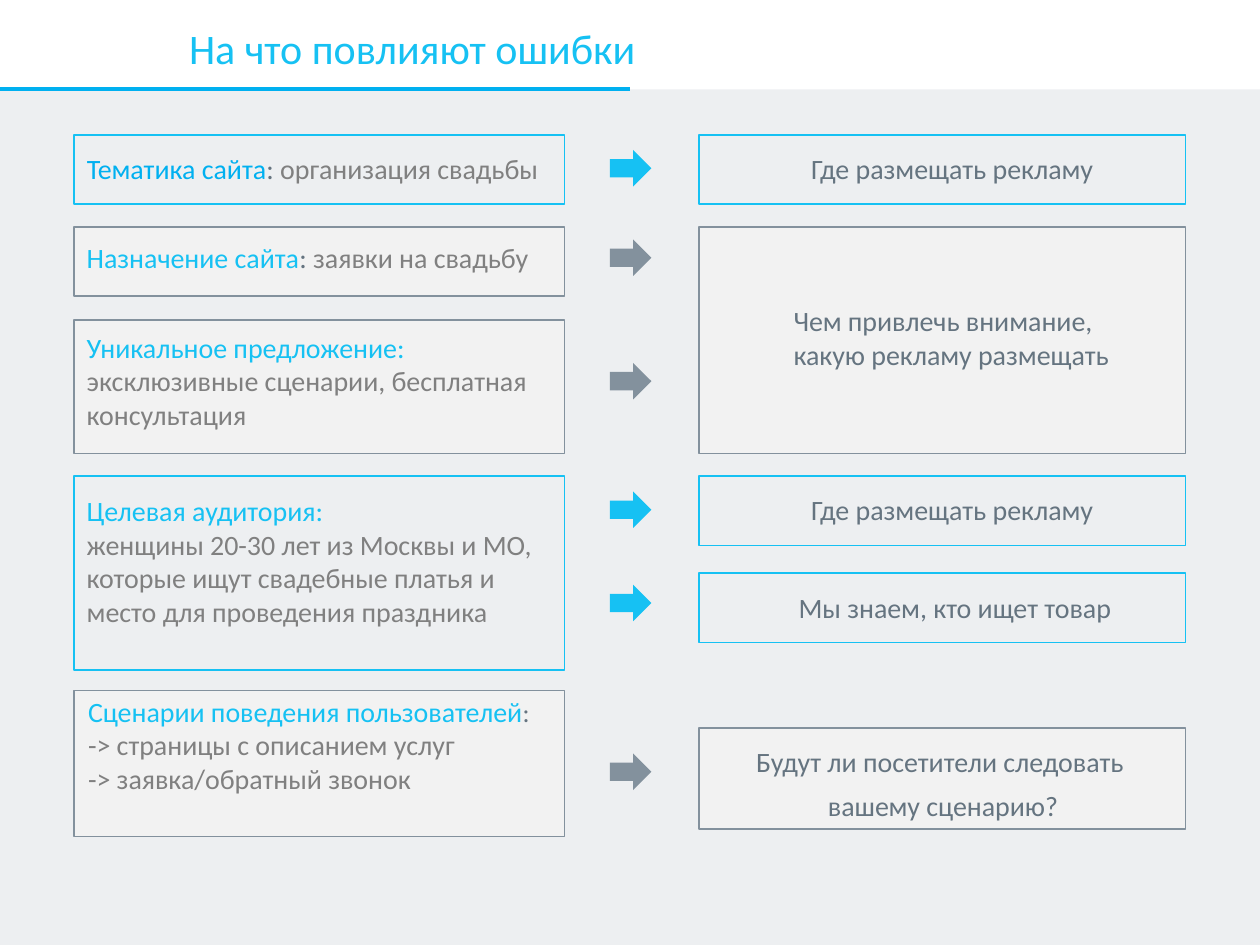
import pptx
import pptx.util
import pptx.dml.color
import pptx.enum.shapes
import pptx.enum.text
import pptx.oxml
import pptx.oxml.ns
from lxml import etree

Inches, Pt = pptx.util.Inches, pptx.util.Pt
SHAPE = pptx.enum.shapes.MSO_SHAPE
ALIGN = pptx.enum.text.PP_ALIGN
COLORS = {"panel": "E8EBED", "box": "F2F2F2", "slate": "83919D", "cyan": "16C1F3",
          "blue": "00B0F0", "label": "657480", "body": "808080"}


def rgb(name):
    return pptx.dml.color.RGBColor.from_string(COLORS[name])


def write(frame, paragraphs, size=16, align=ALIGN.LEFT, after=0):
    """Each paragraph is a list of (text, colour) or (text, colour, size) runs."""
    for number, runs in enumerate(paragraphs):
        paragraph = frame.paragraphs[0] if number == 0 else frame.add_paragraph()
        paragraph.alignment = align
        paragraph.space_before, paragraph.space_after = Pt(0), Pt(after)
        for words, color, *own_size in runs:
            run = paragraph.add_run()
            run.text = words
            run.font.name = "Calibri"
            run.font.size = Pt(own_size[0] if own_size else size)
            run.font.color.rgb = rgb(color)


prs = pptx.Presentation()
prs.slide_width, prs.slide_height = Inches(10), Inches(7.5)
slide = prs.slides.add_slide(prs.slide_layouts[5])
shapes = slide.shapes

# Title
title = shapes.title
title.left, title.top, title.width, title.height = map(Inches, (0.12, 0.13, 5.38, 0.5))
title.text_frame.vertical_anchor = pptx.enum.text.MSO_ANCHOR.TOP
title.text_frame.margin_left = Inches(1.38)
title.text_frame.margin_right = 0
title.text_frame.auto_size = pptx.enum.text.MSO_AUTO_SIZE.NONE
write(title.text_frame, [[("На что повлияют ошибки", "cyan")]], size=24)

# Pale panel under the title
panel = shapes.add_shape(SHAPE.RECTANGLE, 0, Inches(0.71), Inches(10), Inches(6.79))
panel.shadow.inherit = False
panel.fill.solid()
panel.fill.fore_color.rgb = rgb("panel")
panel.line.fill.background()
panel_color = panel.fill._xPr.find(".//" + pptx.oxml.ns.qn("a:srgbClr"))
etree.SubElement(panel_color, pptx.oxml.ns.qn("a:alpha"), val="76000")

# Title underline
underline = shapes.add_connector(pptx.enum.shapes.MSO_CONNECTOR.STRAIGHT,
                                 0, Inches(0.71), Inches(5), Inches(0.71))
underline.line.color.rgb = rgb("blue")
underline.line.width = Pt(2.25)
etree.SubElement(underline._element.spPr, pptx.oxml.ns.qn("a:effectLst"))

# Frames: causes on the left, effects on the right; grey ones are filled
CAUSE, EFFECT = (0.59, 3.89), (5.55, 3.86)
frames = [
    (CAUSE, 1.07, 0.55, "cyan"), (CAUSE, 1.8, 0.55, "slate"), (CAUSE, 2.54, 1.06, "slate"),
    (CAUSE, 3.78, 1.54, "cyan"), (CAUSE, 5.48, 1.16, "slate"),
    (EFFECT, 1.07, 0.55, "cyan"), (EFFECT, 1.8, 1.8, "slate"), (EFFECT, 3.78, 0.55, "cyan"),
    (EFFECT, 4.55, 0.55, "cyan"), (EFFECT, 5.78, 0.8, "slate"),
]
for (left, width), top, height, color in frames:
    frame = shapes.add_shape(SHAPE.RECTANGLE, Inches(left), Inches(top),
                             Inches(width), Inches(height))
    frame.shadow.inherit = False
    frame.line.color.rgb = rgb(color)
    frame.line.width = Pt(1)
    if color == "slate":
        frame.fill.solid()
        frame.fill.fore_color.rgb = rgb("box")
    else:
        frame.fill.background()

# Arrows from cause to effect
for top, color in [(1.19, "cyan"), (1.9, "slate"), (2.88, "slate"),
                   (3.9, "cyan"), (4.64, "cyan"), (5.98, "slate")]:
    arrow = shapes.add_shape(SHAPE.RIGHT_ARROW, Inches(4.84), Inches(top),
                             Inches(0.33), Inches(0.29))
    arrow.shadow.inherit = False
    arrow.fill.solid()
    arrow.fill.fore_color.rgb = rgb(color)
    arrow.line.fill.background()

# Texts: place, wrapping, paragraphs
where_to_advertise = [[("Где размещать рекламу", "label")]]
texts = [
    ((0.59, 1.15, 4.02, 0.37), True,
     [[("Тематика сайта", "blue"), (": ", "label"), ("организация свадьбы", "body")]]),
    ((0.59, 1.86, 3.74, 0.37), False,
     [[("Назначение сайта", "cyan"), (": ", "label"), ("заявки на свадьбу", "body")]]),
    ((0.59, 2.57, 3.74, 0.91), True,
     [[("Уникальное предложение:", "cyan")],
      [("эксклюзивные сценарии, бесплатная консультация", "body")]]),
    ((0.59, 3.87, 3.83, 1.18), False,
     [[("Целевая аудитория:", "cyan")],
      [("женщины 20-30 лет из Москвы и МО,", "body")],
      [("которые ищут свадебные платья и", "body")],
      [("место для проведения праздника", "body")]]),
    ((0.6, 5.46, 3.88, 0.91), True,
     [[("Сценарии поведения пользователей", "cyan"), (":", "label", 15)],
      [("-> страницы с описанием услуг", "body")],
      [("-> заявка/обратный звонок", "body")]]),
    ((6.34, 1.15, 2.47, 0.37), False, where_to_advertise),
    ((6.2, 2.36, 2.74, 0.64), False,
     [[("Чем привлечь внимание,", "label")], [("какую рекламу размещать", "label")]]),
    ((6.34, 3.86, 2.47, 0.37), False, where_to_advertise),
    ((6.24, 4.64, 2.72, 0.37), False, [[("Мы знаем, кто ищет товар", "label")]]),
]
for place, wrap, paragraphs in texts:
    caption = shapes.add_textbox(*map(Inches, place))
    caption.text_frame.word_wrap = wrap
    write(caption.text_frame, paragraphs)

# Closing question, centred
question = shapes.add_textbox(*map(Inches, (5.88, 5.86, 3.21, 0.72)))
question.text_frame.word_wrap = False
write(question.text_frame,
      [[("Будут ли посетители следовать ", "label")], [("вашему сценарию?", "label")]],
      align=ALIGN.CENTER, after=6)

prs.save("out.pptx")
